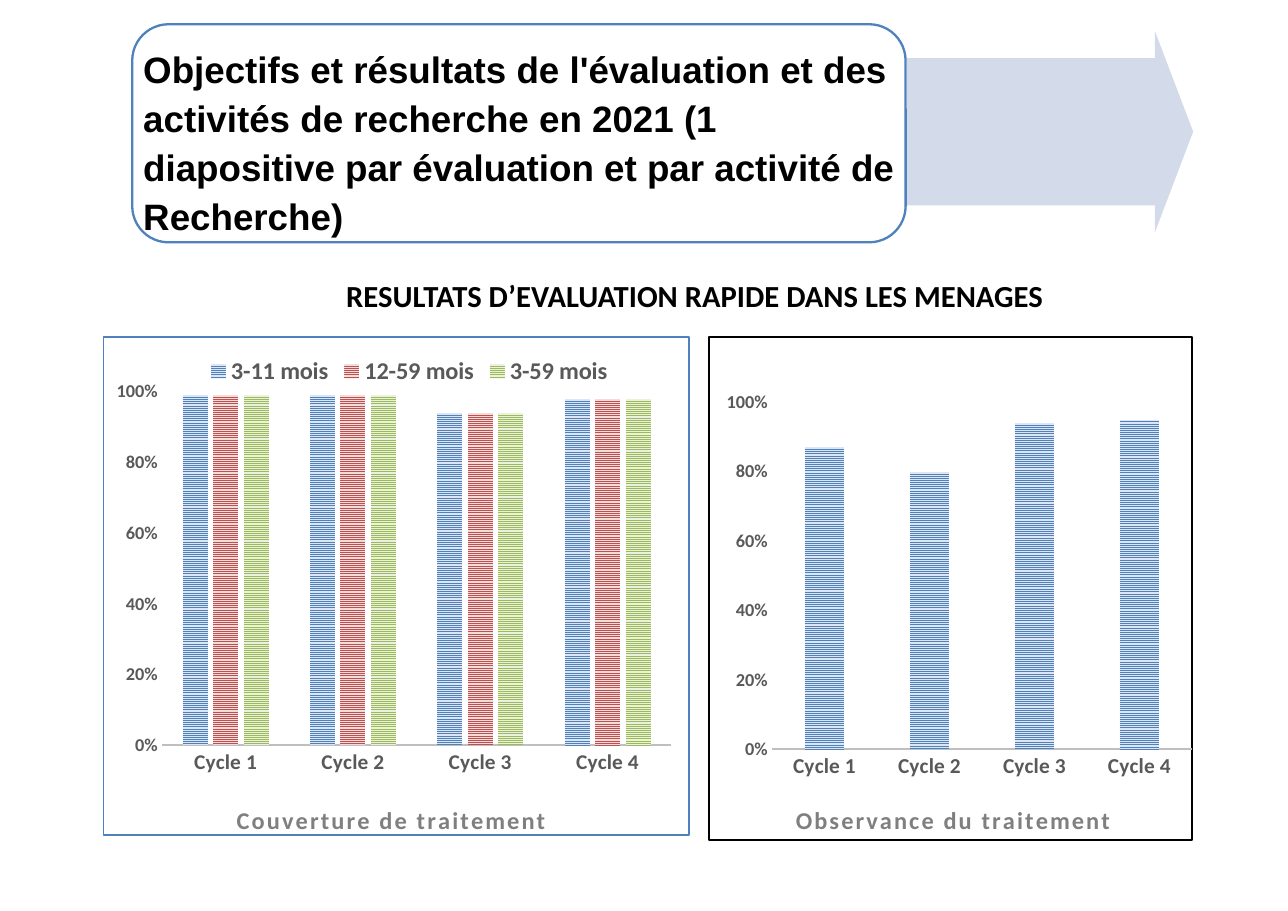
from lxml import etree
from pptx import Presentation, util as u
from pptx.chart.data import CategoryChartData
from pptx.dml.color import RGBColor
from pptx.enum import chart as ch, dml, shapes, text
from pptx.oxml import parse_xml
from pptx.oxml.ns import nsdecls, qn

WIDTH, HEIGHT = u.Inches(11.69), u.Inches(8.27)
COLUMN, ROW = WIDTH / 100, HEIGHT / 100  # grid of 100 by 100

BLACK = RGBColor(0x00, 0x00, 0x00)
BLUE = RGBColor(0x4F, 0x81, 0xBD)
RED = RGBColor(0xC0, 0x50, 0x4D)
GREEN = RGBColor(0x9B, 0xBB, 0x59)
PALE_BLUE = RGBColor(0xDC, 0xE6, 0xF2)
PALE_RED = RGBColor(0xF2, 0xDC, 0xDB)
PALE_GREEN = RGBColor(0xEB, 0xF1, 0xDE)
ARROW_BLUE = RGBColor(0xCF, 0xD8, 0xE8)
LABEL_GREY = RGBColor(0x59, 0x59, 0x59)
CAPTION_GREY = RGBColor(0x7F, 0x7F, 0x7F)
AXIS_GREY = RGBColor(0xBF, 0xBF, 0xBF)

BAR_COLOURS = [(BLUE, PALE_BLUE), (RED, PALE_RED), (GREEN, PALE_GREEN)]
CYCLES = ["Cycle 1", "Cycle 2", "Cycle 3", "Cycle 4"]
COVERAGE_BY_CYCLE = [0.99, 0.99, 0.94, 0.98]
COVERAGE = {age: COVERAGE_BY_CYCLE
            for age in ("3-11 mois", "12-59 mois", "3-59 mois")}
ADHERENCE = {"Observance": [0.87, 0.80, 0.94, 0.95]}


def grid(left, top, width, height):
    """Turn columns and rows into slide lengths."""
    return (int(left * COLUMN), int(top * ROW),
            int(width * COLUMN), int(height * ROW))


def style(font, size, colour, name="Calibri"):
    font.name, font.size, font.bold = name, u.Pt(size), True
    font.color.rgb = colour


def write(frame, words, size, align, name="Calibri"):
    frame.word_wrap = True
    frame.auto_size = text.MSO_AUTO_SIZE.NONE
    paragraph = frame.paragraphs[0]
    paragraph.alignment = align
    run = paragraph.add_run()
    run.text = words
    style(run.font, size, BLACK, name)
    return paragraph


def add_plain_shape(slide, kind, place):
    shape = slide.shapes.add_shape(kind, *grid(*place))
    shape.shadow.inherit = False
    return shape


def add_banner(slide):
    # Arrow running out of the title box
    arrow = add_plain_shape(slide, shapes.MSO_SHAPE.RIGHT_ARROW,
                            (70.4, 3.39, 22.24, 22.13))
    arrow.adjustments[0], arrow.adjustments[1] = 0.73, 0.19
    arrow.fill.solid()
    arrow.fill.fore_color.rgb = ARROW_BLUE
    arrow.line.fill.background()
    colour = arrow._element.spPr.find(".//" + qn("a:srgbClr"))
    etree.SubElement(colour, qn("a:alpha"), val="90000")

    # Rounded outline
    outline = add_plain_shape(slide, shapes.MSO_SHAPE.ROUNDED_RECTANGLE,
                              (10.27, 2.66, 60.05, 23.94))
    outline.fill.background()
    outline.line.color.rgb = BLUE
    outline.line.width = u.Pt(1.5)

    # Title
    title = slide.shapes.title
    title.left, title.top, title.width, title.height = grid(
        11.12, 4.6, 58.34, 20.56)
    frame = title.text_frame
    frame.margin_left = frame.margin_right = 0
    frame.margin_top = frame.margin_bottom = 0
    frame.vertical_anchor = text.MSO_ANCHOR.TOP
    paragraph = write(
        frame,
        "Objectifs et résultats de l'évaluation et des activités de "
        "recherche en 2021 (1 diapositive par évaluation et par activité "
        "de Recherche)", 24, text.PP_ALIGN.LEFT, "Arial")
    paragraph.line_spacing = 1.11


def add_heading(slide, words, place):
    heading = slide.shapes.add_textbox(*grid(*place))
    write(heading.text_frame, words, 20, text.PP_ALIGN.CENTER)


def set_layout(element, position, target="", **shares):
    """Place a chart part by shares of the chart's size."""
    for old in element.findall(qn("c:layout")):
        element.remove(old)
    modes = "".join(f'<c:{axis}Mode val="edge"/>' for axis in "xy")
    values = "".join(f'<c:{key} val="{share}"/>'
                     for key, share in shares.items())
    element.insert(position, parse_xml(
        f'<c:layout {nsdecls("c")}><c:manualLayout>{target}{modes}{values}'
        '</c:manualLayout></c:layout>'))


def add_border(chart, colour):
    chart._chartSpace.find(qn("c:chart")).addnext(parse_xml(
        f'<c:spPr {nsdecls("c", "a")}><a:noFill/><a:ln w="{u.Pt(1.25)}">'
        f'<a:solidFill><a:srgbClr val="{colour}"/></a:solidFill></a:ln>'
        '</c:spPr>'))


def add_caption(chart, words, x, y):
    chart.has_title = True
    title = chart.chart_title
    run = title.text_frame.paragraphs[0].add_run()
    run.text = words
    style(run.font, 16, CAPTION_GREY)
    run._r.get_or_add_rPr().set("spc", "150")
    title.include_in_layout = False
    set_layout(title._element, 1, x=x, y=y)


def format_axes(chart):
    cycles, shares = chart.category_axis, chart.value_axis
    for axis, size in ((cycles, 14), (shares, 12)):
        axis.major_tick_mark = axis.minor_tick_mark = ch.XL_TICK_MARK.NONE
        axis.has_major_gridlines = False
        style(axis.tick_labels.font, size, LABEL_GREY)
    cycles.format.line.color.rgb = AXIS_GREY
    cycles.format.line.width = u.Pt(1.5)
    shares.format.line.fill.background()
    shares.minimum_scale, shares.maximum_scale = 0, 1
    shares.major_unit = 0.2
    shares.tick_labels.number_format = "0%"
    shares.tick_labels.number_format_is_linked = False


def add_column_chart(slide, place, results, border, plot_area):
    data = CategoryChartData(number_format="0%")
    data.categories = CYCLES
    for name, values in results.items():
        data.add_series(name, values)
    chart = slide.shapes.add_chart(
        ch.XL_CHART_TYPE.COLUMN_CLUSTERED, *grid(*place), data).chart
    chart.font.name, chart.font.size = "Calibri", u.Pt(10)
    chart.has_legend = False
    add_border(chart, border)
    format_axes(chart)

    # Striped columns
    plot = chart.plots[0]
    plot.gap_width, plot.overlap, plot.vary_by_categories = 164, -22, False
    for series, (stripe, ground) in zip(plot.series, BAR_COLOURS):
        fill = series.format.fill
        fill.patterned()
        fill.pattern = dml.MSO_PATTERN.NARROW_HORIZONTAL
        fill.fore_color.rgb, fill.back_color.rgb = stripe, ground

    x, y, w, h = plot_area
    set_layout(chart._chartSpace.find(".//" + qn("c:plotArea")), 0,
               '<c:layoutTarget val="inner"/>', x=x, y=y, w=w, h=h)
    return chart


def add_legend(chart, x, y):
    chart.has_legend = True
    chart.legend.position = ch.XL_LEGEND_POSITION.TOP
    chart.legend.include_in_layout = False
    style(chart.legend.font, 16, LABEL_GREY)
    set_layout(chart.legend._element, 1, x=x, y=y)


def main():
    deck = Presentation()
    deck.slide_width, deck.slide_height = WIDTH, HEIGHT
    slide = deck.slides.add_slide(deck.slide_layouts[5])

    add_banner(slide)

    # Treatment coverage by age group
    coverage = add_column_chart(slide, (7.96, 36.88, 45.6, 55.74), COVERAGE,
                                BLUE, (0.1, 0.11, 0.87, 0.71))
    add_caption(coverage, "Couverture de traitement", 0.22, 0.93)
    add_legend(coverage, 0.17, 0.03)

    # Treatment adherence
    adherence = add_column_chart(slide, (55, 36.88, 37.64, 55.74), ADHERENCE,
                                 BLACK, (0.13, 0.13, 0.87, 0.69))
    add_caption(adherence, "Observance du traitement", 0.17, 0.92)

    add_heading(slide, "RESULTATS D’EVALUATION RAPIDE DANS LES MENAGES",
                (22.93, 29.75, 62.02, 5.32))
    deck.save("out.pptx")


if __name__ == "__main__":
    main()
